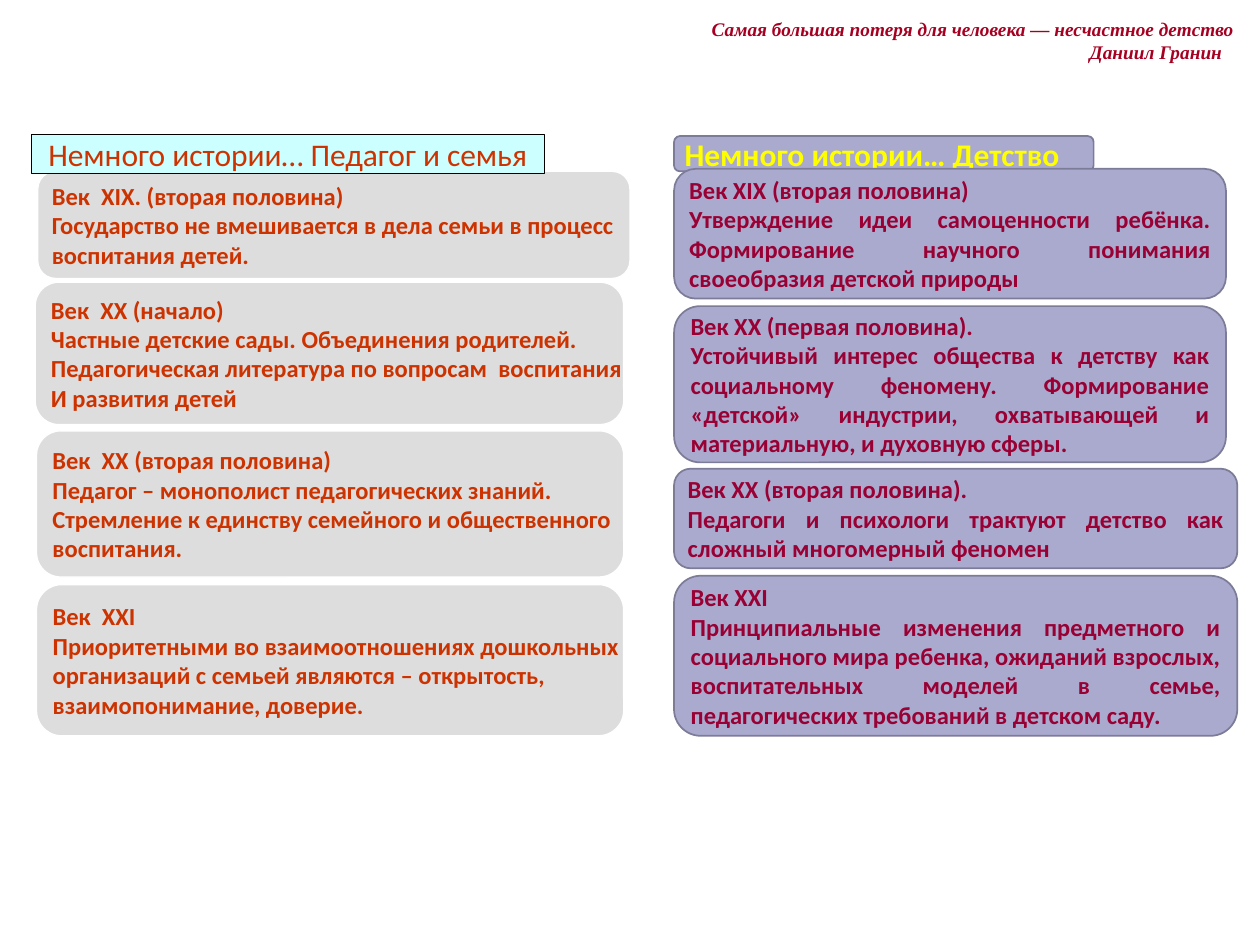
from pptx import Presentation
from pptx.dml.color import RGBColor
from pptx.enum.shapes import MSO_SHAPE as Shape
from pptx.enum.text import MSO_ANCHOR as Anchor, PP_ALIGN as Align
from pptx.util import Inches, Pt

COLORS = {
    "quote": "A50021", "black": "000000", "white": "FFFFFF",
    "cyan": "CCFFFF", "gray": "DDDDDD", "rust": "CC3300",
    "lavender": "AAAACF", "slate": "7C7C98", "wine": "990033", "yellow": "FFFF00",
}

# Each card: left, top, width, height, alignment, lines
FAMILY_CARDS = [
    (0.3, 1.36, 4.7, 0.85, Align.LEFT, [
        "Век  XIX. (вторая половина)",
        "Государство не вмешивается в дела семьи в процесс",
        "воспитания детей."]),
    (0.28, 2.24, 4.67, 1.13, Align.JUSTIFY, [
        "Век  XX (начало)",
        "Частные детские сады. Объединения родителей. ",
        "Педагогическая литература по вопросам  воспитания ",
        "И развития детей"]),
    (0.29, 3.42, 4.66, 1.16, Align.LEFT, [
        "Век  XX (вторая половина)",
        "Педагог – монополист педагогических знаний.",
        "Стремление к единству семейного и общественного",
        "воспитания."]),
    (0.29, 4.64, 4.66, 1.2, Align.LEFT, [
        "Век  XXI",
        "Приоритетными во взаимоотношениях дошкольных",
        "организаций с семьей являются – открытость,",
        "взаимопонимание, доверие."]),
]

# Each card: top, width, height, lines
CHILDHOOD_CARDS = [
    (1.34, 4.38, 1.03, [
        "Век XIX (вторая половина)",
        "Утверждение идеи самоценности ребёнка. Формирование научного понимания "
        "своеобразия детской природы"]),
    (2.43, 4.38, 1.24, [
        "Век ХХ (первая половина). ",
        "Устойчивый интерес общества к детству как социальному феномену. "
        "Формирование «детской» индустрии, охватывающей и материальную, "
        "и духовную сферы."]),
    (3.72, 4.47, 0.79, [
        "Век ХХ (вторая половина). ",
        "Педагоги и психологи трактуют детство как сложный многомерный феномен"]),
    (4.57, 4.47, 1.27, [
        "Век ХХI ",
        "Принципиальные изменения предметного и социального мира ребенка, ожиданий "
        "взрослых, воспитательных моделей в семье, педагогических требований "
        "в детском саду."]),
]
CHILDHOOD_LEFT = 5.35


def rgb(name):
    return RGBColor.from_string(COLORS[name])


class SlideBuilder:
    """Holds the shared style and the current slide."""

    font = "Calibri"
    quote_font = "Times New Roman"
    card_size = 14
    heading_size = 18

    def __init__(self, slide):
        self.slide = slide

    def add_lines(self, frame, lines, size, color, align=Align.LEFT, bold=True,
                  italic=False, font=None):
        for index, line in enumerate(lines):
            para = frame.paragraphs[0] if index == 0 else frame.add_paragraph()
            para.alignment = align
            span = para.add_run()
            span.text = line
            span.font.name = font or self.font
            span.font.size = Pt(size)
            span.font.bold = bold
            span.font.italic = italic
            span.font.color.rgb = rgb(color)

    def quote(self, left, top, width, height, saying, author, author_indent):
        box = self.slide.shapes.add_textbox(
            Inches(left), Inches(top), Inches(width), Inches(height))
        frame = box.text_frame
        frame.word_wrap = True
        self.add_lines(frame, [saying, author], 11, "quote", italic=True,
                       font=self.quote_font)
        properties = frame.paragraphs[1]._p.get_or_add_pPr()
        properties.set("marL", str(Inches(author_indent)))

    def panel(self, kind, place, fill, line, line_width, wrap):
        box = self.slide.shapes.add_shape(kind, *map(Inches, place))
        box.shadow.inherit = False
        box.fill.solid()
        box.fill.fore_color.rgb = rgb(fill)
        box.line.color.rgb = rgb(line)
        box.line.width = Pt(line_width)
        frame = box.text_frame
        frame.word_wrap = wrap
        frame.vertical_anchor = Anchor.MIDDLE
        if kind == Shape.ROUNDED_RECTANGLE:
            frame.margin_left = frame.margin_right = Inches(0.07)
            frame.margin_top = frame.margin_bottom = Inches(0.04)
        return frame

    def family_heading(self, place, text):
        frame = self.panel(Shape.RECTANGLE, place, "cyan", "black", 0.75, False)
        self.add_lines(frame, [text], self.heading_size, "rust", Align.CENTER, bold=False)

    def family_card(self, place, align, lines):
        frame = self.panel(Shape.ROUNDED_RECTANGLE, place, "gray", "white", 0.75, False)
        self.add_lines(frame, lines, self.card_size, "rust", align)

    def childhood_card(self, place, lines, size=card_size, color="wine"):
        frame = self.panel(Shape.ROUNDED_RECTANGLE, place, "lavender", "slate", 1, True)
        self.add_lines(frame, lines, size, color, Align.JUSTIFY)


def main():
    deck = Presentation()
    deck.slide_width, deck.slide_height = Inches(10), Inches(7.5)
    page = SlideBuilder(deck.slides.add_slide(deck.slide_layouts[6]))

    # Epigraph
    page.quote(5.55, 0.09, 4.35, 0.47,
               "Самая большая потеря для человека — несчастное детство",
               "Даниил Гранин", author_indent=3)

    # Right column: childhood, with the heading behind the first card
    page.childhood_card((CHILDHOOD_LEFT, 1.08, 3.33, 0.28),
                        ["Немного истории… Детство"], page.heading_size, "yellow")
    for top, width, height, lines in CHILDHOOD_CARDS:
        page.childhood_card((CHILDHOOD_LEFT, top, width, height), lines)

    # Left column: teacher and family, with the heading over the first card
    for *place, align, lines in FAMILY_CARDS:
        page.family_card(place, align, lines)
    page.family_heading((0.25, 1.07, 4.07, 0.31), "Немного истории… Педагог и семья")

    deck.save("out.pptx")


if __name__ == "__main__":
    main()
